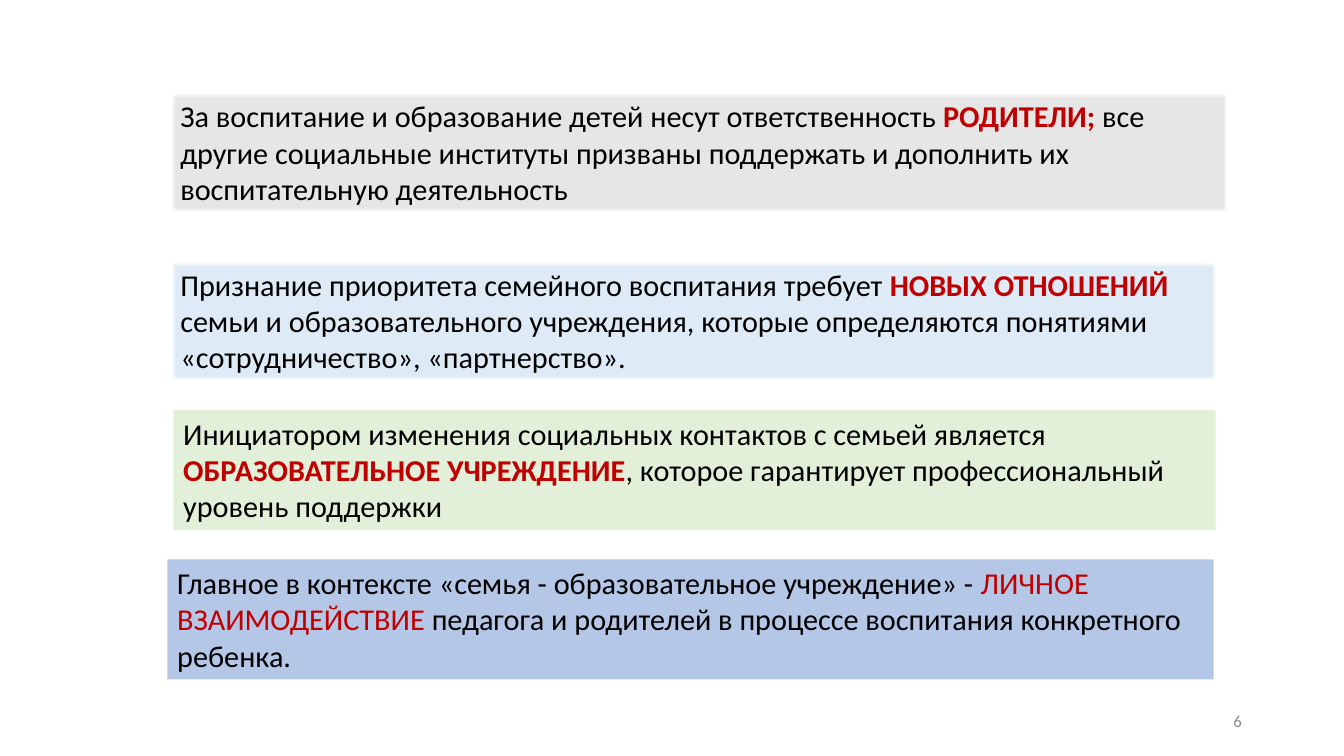
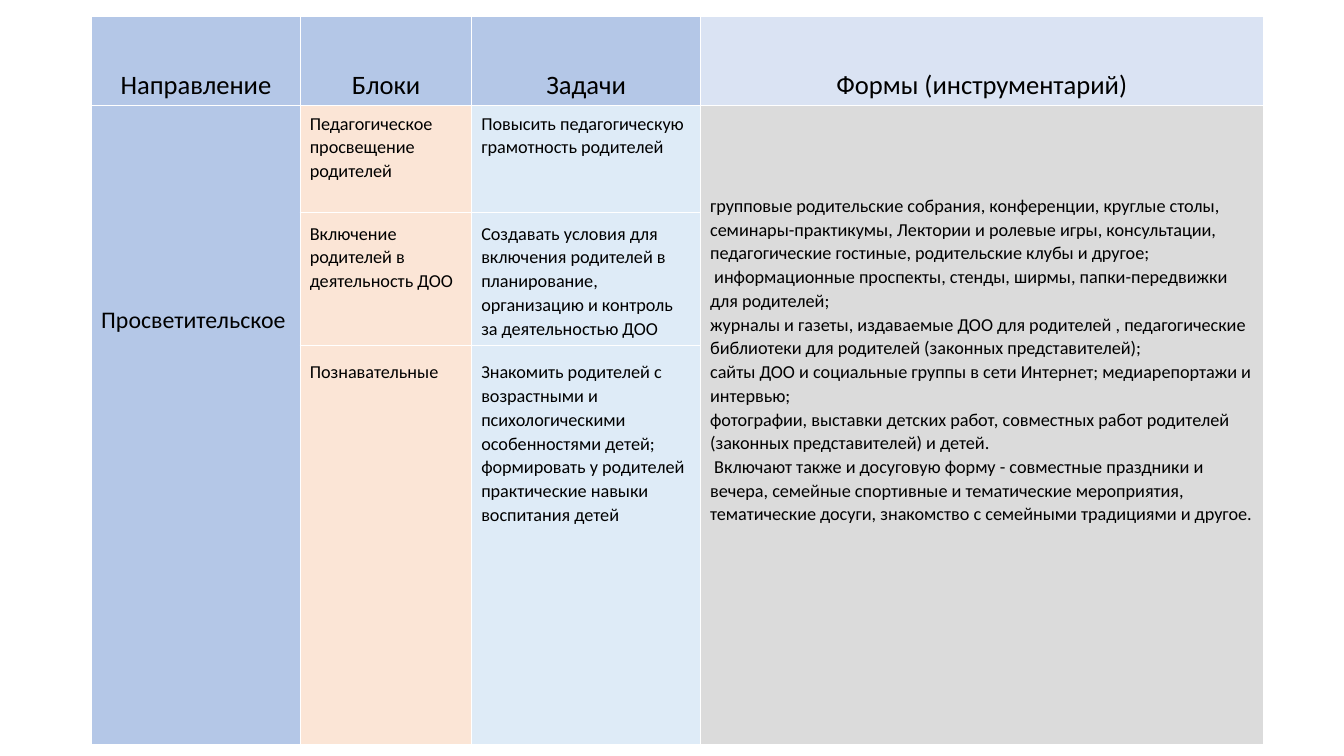
from dataclasses import dataclass
from typing import Any

from lxml.etree import SubElement
from pptx import Presentation
from pptx.dml.color import RGBColor
from pptx.enum.shapes import MSO_SHAPE as Preset
from pptx.enum.text import MSO_ANCHOR as Anchor, MSO_AUTO_SIZE as AutoSize, PP_ALIGN as Align
from pptx.oxml.ns import qn
from pptx.util import Pt

FONT = "Calibri"
BLACK, RED, GRAY, WHITE = "000000", "C00000", "8C8C8C", "FFFFFF"
BLUE, PALE_BLUE, ICE, PEACH, SILVER = "B4C7E7", "DAE3F3", "DEEBF7", "FBE5D6", "DBDBDB"
STATEMENT_HEIGHT = 85.7
COLUMN_WIDTHS = (149, 122.5, 163.5, 401.8)
ROW_HEIGHTS = (63.4, 76.3, 95, 285.1)


@dataclass(frozen=True)
class Statement:
    left: float
    top: float
    width: float
    fill: str
    before: str
    accent: str
    after: str
    bold: bool = True
    soft_edge: float = 0


@dataclass(frozen=True)
class CellText:
    row: int
    column: int
    fill: str
    paragraphs: tuple[str, ...]
    top_margin: float
    size: float = 13
    row_span: int = 1


STATEMENTS = (
    Statement(121.7, 66.2, 755.3, "E7E6E6",
              "За воспитание и образование детей несут ответственность ", "РОДИТЕЛИ;",
              " все другие социальные институты призваны поддержать и дополнить их "
              "воспитательную деятельность", soft_edge=2.5),
    Statement(121.7, 186.5, 747.4, ICE,
              "Признание приоритета семейного воспитания требует ", "НОВЫХ ОТНОШЕНИЙ ",
              "семьи и образовательного учреждения, которые определяются понятиями "
              "«сотрудничество», «партнерство».", soft_edge=2.5),
    Statement(123.8, 293, 744.5, "E2F0D9",
              "Инициатором изменения социальных контактов с семьей является ",
              "ОБРАЗОВАТЕЛЬНОЕ УЧРЕЖДЕНИЕ",
              ", которое гарантирует профессиональный уровень поддержки"),
    Statement(119.5, 399.6, 747.4, BLUE,
              "Главное в контексте «семья - образовательное учреждение» - ",
              "ЛИЧНОЕ ВЗАИМОДЕЙСТВИЕ ",
              "педагога и родителей в процессе воспитания конкретного ребенка.", bold=False),
)

HEADERS = (("Направление", BLUE), ("Блоки", BLUE), ("Задачи", BLUE),
           ("Формы (инструментарий)", PALE_BLUE))

TASK_ROWS = (
    (4.3, "Педагогическое просвещение родителей",
     "Повысить педагогическую грамотность родителей"),
    (6.5, "Включение родителей в деятельность ДОО",
     "Создавать условия для включения родителей в планирование, организацию и контроль "
     "за деятельностью ДОО"),
    (10.6, "Познавательные",
     "Знакомить родителей с возрастными и психологическими особенностями детей; "
     "формировать у родителей практические навыки воспитания детей"),
)

FORMS = (
    "групповые родительские собрания, конференции, круглые столы, семинары-практикумы, "
    "Лектории и ролевые игры, консультации, педагогические гостиные, родительские клубы "
    "и другое;",
    " информационные проспекты, стенды, ширмы, папки-передвижки для родителей;",
    "журналы и газеты, издаваемые ДОО для родителей , педагогические библиотеки для "
    "родителей (законных представителей);",
    "сайты ДОО и социальные группы в сети Интернет; медиарепортажи и интервью;",
    "фотографии, выставки детских работ, совместных работ родителей (законных "
    "представителей) и детей.",
    " Включают также и досуговую форму - совместные праздники и вечера, семейные "
    "спортивные и тематические мероприятия, тематические досуги, знакомство с семейными "
    "традициями и другое.",
)


def color(value: str) -> RGBColor:
    return RGBColor.from_string(value)


def apply_format(target: Any, values: dict[str, Any]) -> None:
    for name, value in values.items():
        setattr(target, name, value)


def set_fill(target: Any, value: str) -> None:
    target.fill.solid()
    target.fill.fore_color.rgb = color(value)


def add_run(paragraph: Any, text: str, size: float, value: str = BLACK,
            bold: bool = False) -> None:
    run = paragraph.add_run()
    run.text = text
    apply_format(run.font, {"name": FONT, "size": Pt(size), "bold": bold})
    run.font.color.rgb = color(value)


def add_statement(slide: Any, statement: Statement) -> None:
    shape = slide.shapes.add_shape(Preset.RECTANGLE, Pt(statement.left), Pt(statement.top),
                                   Pt(statement.width), Pt(STATEMENT_HEIGHT))
    shape.shadow.inherit = False
    set_fill(shape, statement.fill)
    shape.line.fill.background()
    if statement.soft_edge:
        effects = shape.element.spPr.find(qn("a:effectLst"))
        SubElement(effects, qn("a:softEdge"), rad=str(Pt(statement.soft_edge)))
    apply_format(shape.text_frame, {"word_wrap": True, "vertical_anchor": Anchor.TOP,
                                    "auto_size": AutoSize.SHAPE_TO_FIT_TEXT})
    paragraph = shape.text_frame.paragraphs[0]
    paragraph.alignment = Align.LEFT
    add_run(paragraph, statement.before, 21.6)
    add_run(paragraph, statement.accent, 21.6, RED, statement.bold)
    add_run(paragraph, statement.after, 21.6)


def add_slide_number(slide: Any, number: str) -> None:
    box = slide.shapes.add_textbox(Pt(678.2), Pt(500.4), Pt(216), Pt(28.8))
    apply_format(box.text_frame, {"word_wrap": True, "vertical_anchor": Anchor.MIDDLE})
    paragraph = box.text_frame.paragraphs[0]
    paragraph.alignment = Align.RIGHT
    add_run(paragraph, number, 12, GRAY)


def set_borders(cell: Any) -> None:
    properties = cell._tc.get_or_add_tcPr()
    for side in ("a:lnL", "a:lnR", "a:lnT", "a:lnB"):
        line = SubElement(properties, qn(side), w=str(Pt(1)))
        SubElement(SubElement(line, qn("a:solidFill")), qn("a:srgbClr"), val=WHITE)


def fill_cell(table: Any, content: CellText) -> None:
    cell = table.cell(content.row, content.column)
    if content.row_span > 1:
        cell.merge(table.cell(content.row + content.row_span - 1, content.column))
    is_header = content.row == 0
    apply_format(cell, {"margin_left": Pt(6.8), "margin_right": Pt(6.8),
                        "margin_top": Pt(content.top_margin), "margin_bottom": Pt(3),
                        "vertical_anchor": Anchor.BOTTOM if is_header else Anchor.TOP})
    set_fill(cell, content.fill)
    for index, text in enumerate(content.paragraphs):
        frame = cell.text_frame
        paragraph = frame.add_paragraph() if index else frame.paragraphs[0]
        apply_format(paragraph, {"line_spacing": 1.07,
                                 "alignment": Align.CENTER if is_header else Align.LEFT})
        add_run(paragraph, text, content.size)


def table_contents() -> list[CellText]:
    contents = [CellText(0, column, fill, (text,), 3, 19)
                for column, (text, fill) in enumerate(HEADERS)]
    contents.append(CellText(1, 0, BLUE, ("Просветительское",), 142, 17, 3))
    for row, (margin, block, task) in enumerate(TASK_ROWS, 1):
        contents.append(CellText(row, 1, PEACH, (block,), margin))
        contents.append(CellText(row, 2, ICE, (task,), margin))
    contents.append(CellText(1, 3, SILVER, FORMS, 63, row_span=3))
    return contents


def add_directions_table(slide: Any) -> None:
    frame = slide.shapes.add_table(len(ROW_HEIGHTS), len(COLUMN_WIDTHS), Pt(65.5), Pt(11.9),
                                   Pt(sum(COLUMN_WIDTHS)), Pt(sum(ROW_HEIGHTS)))
    table = frame.table
    apply_format(table, {"first_row": False, "horz_banding": False})
    for column, width in zip(table.columns, COLUMN_WIDTHS):
        column.width = Pt(width)
    for row, height in zip(table.rows, ROW_HEIGHTS):
        row.height = Pt(height)
    for cell in table.iter_cells():
        set_borders(cell)
    for content in table_contents():
        fill_cell(table, content)


def main() -> None:
    """Build the statements slide and the directions table slide."""
    presentation = Presentation()
    apply_format(presentation, {"slide_width": Pt(960), "slide_height": Pt(540)})
    blank = presentation.slide_layouts[6]
    statements_slide = presentation.slides.add_slide(blank)
    add_slide_number(statements_slide, "6")
    for statement in STATEMENTS:
        add_statement(statements_slide, statement)
    add_directions_table(presentation.slides.add_slide(blank))
    presentation.save("out.pptx")


if __name__ == "__main__":
    main()
